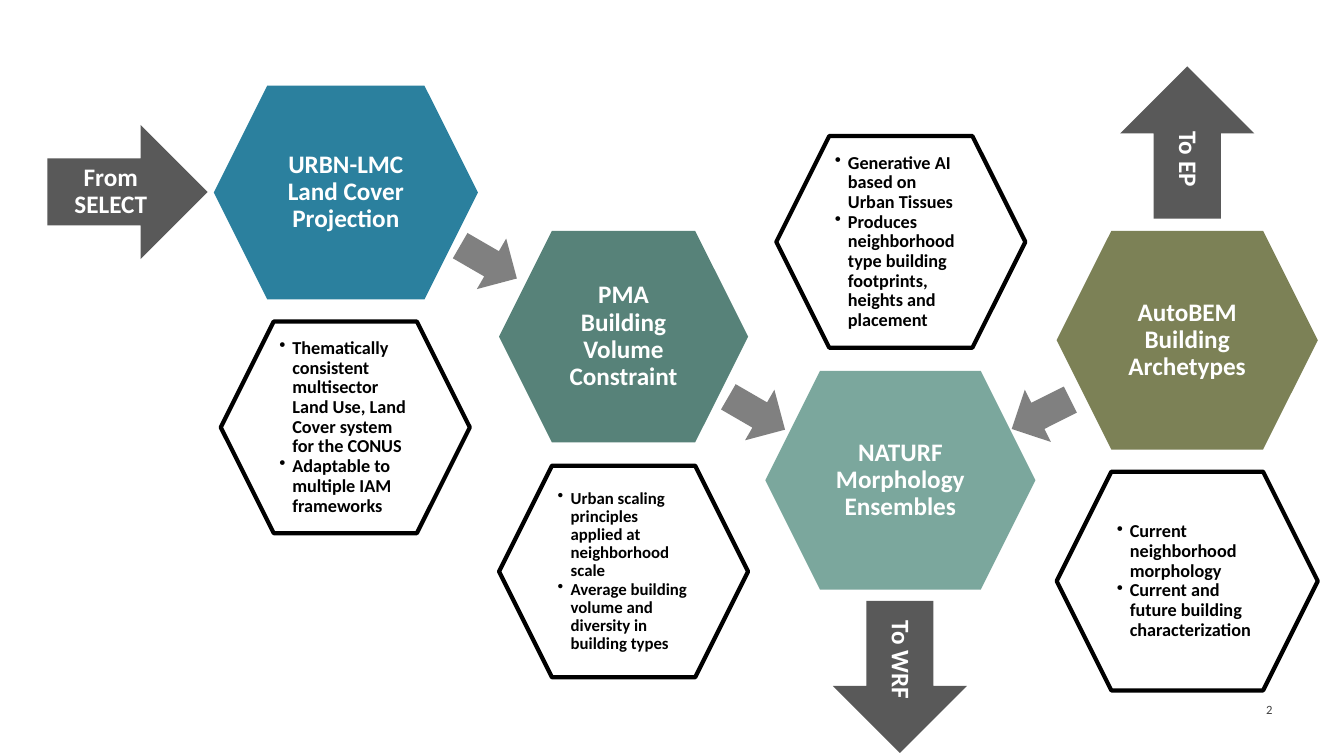
"""Build the urban modelling workflow slide of hexagons and arrows."""
from dataclasses import dataclass

import lxml.etree
import pptx
import pptx.dml.color
import pptx.enum.shapes
import pptx.enum.text
import pptx.oxml.ns
import pptx.shapes.autoshape
import pptx.slide
import pptx.text.text
import pptx.util

Inches = pptx.util.Inches
Shape = pptx.enum.shapes.MSO_SHAPE
Align = pptx.enum.text.PP_ALIGN


@dataclass(frozen=True)
class Theme:
    """Hold colours and type sizes."""
    font: str = "Calibri"
    blue: str = "2B809E"
    green: str = "578279"
    mint: str = "7BA79D"
    olive: str = "7C8156"
    port: str = "595959"
    flow: str = "808080"
    white: str = "FFFFFF"
    black: str = "000000"
    number: str = "404040"
    title_pt: float = 18
    note_pt: float = 13
    small_note_pt: float = 12
    number_pt: float = 9
    outline_pt: float = 3


T = Theme()


@dataclass(frozen=True)
class Box:
    """Place a shape in inches."""
    left: float
    top: float
    width: float
    height: float

    def emu(self) -> list[int]:
        """Return the four lengths for python-pptx."""
        return [Inches(v) for v in (self.left, self.top, self.width, self.height)]


@dataclass(frozen=True)
class Stage:
    """Describe a filled hexagon."""
    box: Box
    fill: str
    lines: tuple[str, ...]


@dataclass(frozen=True)
class Note:
    """Describe an outlined hexagon with bullets."""
    box: Box
    bullets: tuple[str, ...]
    size: float = T.note_pt


@dataclass(frozen=True)
class Arrow:
    """Describe a block arrow."""
    box: Box
    fill: str
    rotation: float = 0
    text: str = ""
    flip: bool = False


STAGES = (
    Stage(Box(2.12, 0.85, 2.62, 2.12), T.blue, ("URBN-LMC", "Land Cover", "Projection")),
    Stage(Box(4.95, 2.29, 2.47, 2.1), T.green, ("PMA", "Building Volume Constraint")),
    Stage(Box(7.59, 3.68, 2.68, 2.17), T.mint, ("NATURF", "Morphology Ensembles")),
    Stage(Box(10.48, 2.29, 2.59, 2.17), T.olive, ("AutoBEM", "Building", "Archetypes")),
)
NOTES = (
    Note(Box(2.19, 3.19, 2.47, 2.1), (
        "Thematically consistent multisector Land Use, Land Cover system for the CONUS",
        "Adaptable to multiple IAM frameworks")),
    Note(Box(4.95, 4.62, 2.47, 2.1), (
        "Urban scaling principles applied at neighborhood scale",
        "Average building volume and diversity in building types"), T.small_note_pt),
    Note(Box(7.7, 1.35, 2.47, 2.1), (
        "Generative AI based on Urban Tissues",
        "Produces neighborhood type building footprints, heights and placement")),
    Note(Box(10.48, 4.68, 2.59, 2.17), (
        "Current neighborhood morphology",
        "Current and future building characterization")),
)
ARROWS = (
    Arrow(Box(8.17, 6.05, 1.51, 1.33), T.port, 90, "To WRF"),
    Arrow(Box(4.52, 2.31, 0.65, 0.58), T.flow, 30.1),
    Arrow(Box(7.18, 3.81, 0.65, 0.58), T.flow, 30.1),
    Arrow(Box(10, 3.82, 0.65, 0.58), T.flow, 153.4),
    Arrow(Box(0.47, 1.24, 1.59, 1.33), T.port, 0, "From SELECT"),
    Arrow(Box(11.02, 0.75, 1.51, 1.33), T.port, 270, "To EP", True),
)


def rgb(value: str) -> pptx.dml.color.RGBColor:
    """Convert a hex string to a colour."""
    return pptx.dml.color.RGBColor.from_string(value)


def add_run(p: pptx.text.text._Paragraph, text: str, size: float, color: str,
            bold: bool = True) -> None:
    """Append a styled run to a paragraph."""
    r = p.add_run()
    r.text = text
    r.font.name = T.font
    r.font.size = pptx.util.Pt(size)
    r.font.bold = bold
    r.font.color.rgb = rgb(color)


def add_bullet(p: pptx.text.text._Paragraph) -> None:
    """Give a paragraph a hanging bullet."""
    pPr = p._p.get_or_add_pPr()
    pPr.set("marL", str(Inches(0.13)))
    pPr.set("indent", str(-Inches(0.13)))
    bu = lxml.etree.SubElement(pPr, pptx.oxml.ns.qn("a:buChar"))
    bu.set("char", "•")


def fill_text(sp: pptx.shapes.autoshape.Shape, lines: tuple[str, ...], size: float,
              color: str, bulleted: bool = False) -> None:
    """Write paragraphs into a shape."""
    tf = sp.text_frame
    tf.word_wrap = True
    tf.vertical_anchor = pptx.enum.text.MSO_ANCHOR.MIDDLE
    tf.margin_left = tf.margin_right = tf.margin_top = tf.margin_bottom = Inches(0.2)
    for i, line in enumerate(lines):
        p = tf.add_paragraph() if i else tf.paragraphs[0]
        if bulleted:
            add_bullet(p)
        p.alignment = Align.LEFT if bulleted else Align.CENTER
        p.line_spacing = 0.9
        add_run(p, line, size, color)


def add_block(s: pptx.slide.Slide, kind: Shape, box: Box,
              fill: str | None = None) -> pptx.shapes.autoshape.Shape:
    """Add a filled shape, or an outlined one when no fill is given."""
    sp = s.shapes.add_shape(kind, *box.emu())
    sp.shadow.inherit = False
    if fill:
        sp.fill.solid()
        sp.fill.fore_color.rgb = rgb(fill)
        sp.line.fill.background()
    else:
        sp.fill.background()
        sp.line.color.rgb = rgb(T.black)
        sp.line.width = pptx.util.Pt(T.outline_pt)
    return sp


def add_arrow(s: pptx.slide.Slide, arrow: Arrow) -> None:
    """Add a block arrow with its optional label."""
    sp = add_block(s, Shape.RIGHT_ARROW, arrow.box, arrow.fill)
    sp.rotation = arrow.rotation
    if arrow.flip:
        sp._element.spPr.get_or_add_xfrm().set("flipV", "1")
    if arrow.text:
        fill_text(sp, (arrow.text,), T.title_pt, T.white)


def add_number(s: pptx.slide.Slide, text: str) -> None:
    """Add the slide number."""
    tf = s.shapes.add_textbox(*Box(11.57, 6.84, 1.15, 0.4).emu()).text_frame
    tf.word_wrap = True
    tf.vertical_anchor = pptx.enum.text.MSO_ANCHOR.MIDDLE
    p = tf.paragraphs[0]
    p.alignment = Align.RIGHT
    add_run(p, text, T.number_pt, T.number, False)


def main() -> None:
    """Build and save the slide."""
    prs = pptx.Presentation()
    prs.slide_width, prs.slide_height = Inches(13.33), Inches(7.5)
    s = prs.slides.add_slide(prs.slide_layouts[6])
    add_number(s, "2")
    for stage in STAGES:
        sp = add_block(s, Shape.HEXAGON, stage.box, stage.fill)
        fill_text(sp, stage.lines, T.title_pt, T.white)
    for arrow in ARROWS:
        add_arrow(s, arrow)
    for note in NOTES:
        sp = add_block(s, Shape.HEXAGON, note.box)
        fill_text(sp, note.bullets, note.size, T.black, True)
    prs.save("out.pptx")


if __name__ == "__main__":
    main()
